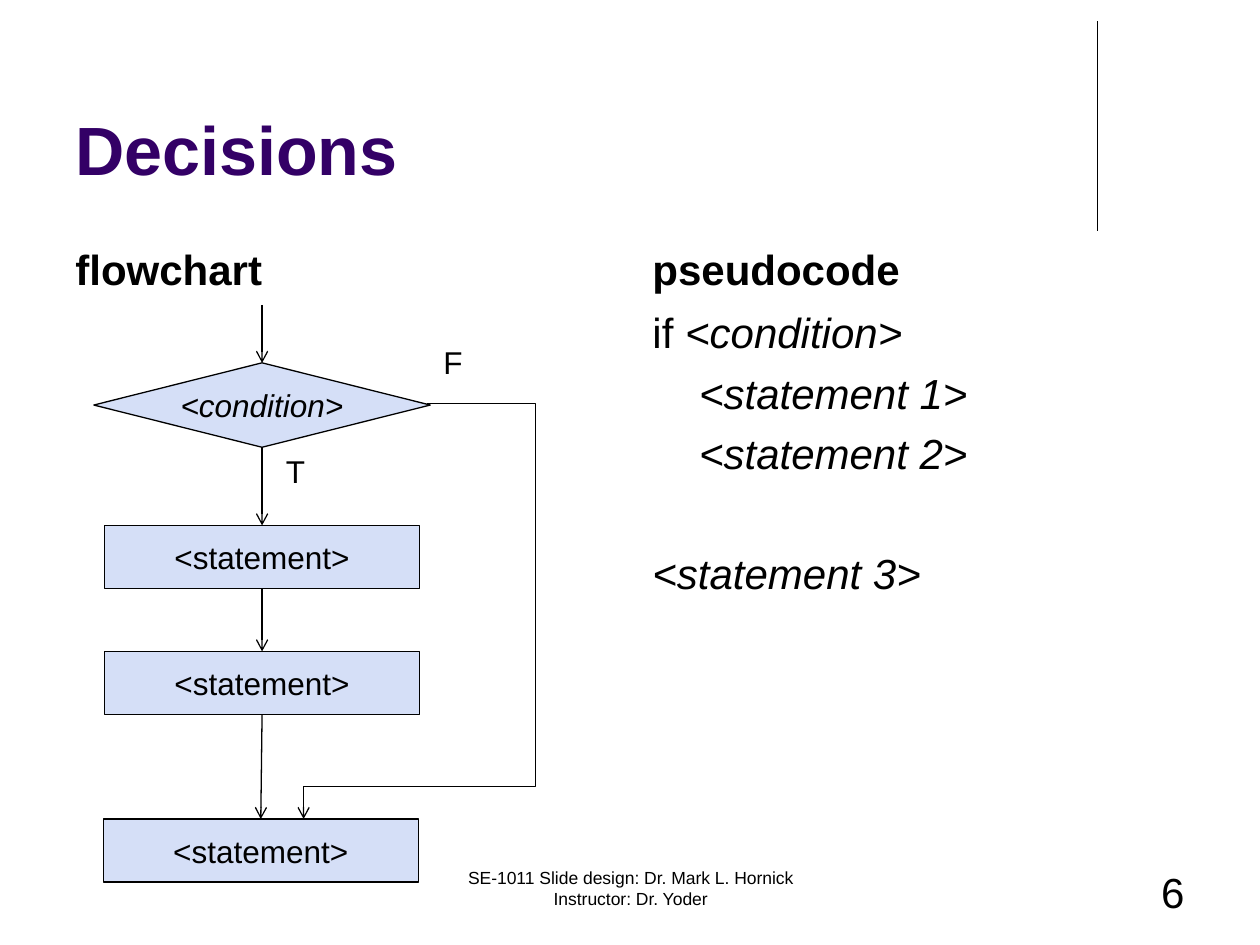
import pptx
import pptx.util
import pptx.dml.color
import pptx.enum.shapes
import pptx.enum.text
import pptx.oxml

Inches, Pt = pptx.util.Inches, pptx.util.Pt
SHAPE = pptx.enum.shapes.MSO_SHAPE
ALIGN = pptx.enum.text.PP_ALIGN
ANCHOR = pptx.enum.text.MSO_ANCHOR

COLORS = {"title": "330066", "ink": "000000", "step": "D5DFF7"}
FONT = "Arial"
NS = 'xmlns:a="http://schemas.openxmlformats.org/drawingml/2006/main"'


def color(name):
    return pptx.dml.color.RGBColor.from_string(COLORS[name])


def write(paragraph, text, size=24, ink="ink", bold=False, italic=False,
          align=ALIGN.LEFT, before=0, indent=0):
    """Add one formatted run to a paragraph."""
    paragraph.alignment = align
    paragraph.space_before = Pt(before)
    if indent:
        properties = paragraph._p.get_or_add_pPr()
        properties.set("marL", str(Inches(indent)))
        properties.set("indent", "0")
    run = paragraph.add_run()
    run.text = text
    run.font.name, run.font.size = FONT, Pt(size)
    run.font.bold, run.font.italic = bold, italic
    run.font.color.rgb = color(ink)


def add_box(slide, left, top, width, height, anchor=ANCHOR.TOP, wrap=True):
    """Add a text box and return its frame."""
    frame = slide.shapes.add_textbox(
        Inches(left), Inches(top), Inches(width), Inches(height)).text_frame
    frame.word_wrap = wrap
    frame.vertical_anchor = anchor
    return frame


def style_line(shape, arrow=False):
    shape.line.color.rgb = color("ink")
    shape.line.width = Pt(0.75)
    if arrow:
        shape.line._get_or_add_ln().append(
            pptx.oxml.parse_xml(f'<a:tailEnd {NS} type="arrow"/>'))


def add_line(slide, x1, y1, x2, y2, arrow=True):
    line = slide.shapes.add_connector(
        pptx.enum.shapes.MSO_CONNECTOR.STRAIGHT,
        Inches(x1), Inches(y1), Inches(x2), Inches(y2))
    style_line(line, arrow)
    line._element.spPr.append(pptx.oxml.parse_xml(f"<a:effectLst {NS}/>"))


def add_step(slide, kind, text, left, top, width, height, italic=False):
    step = slide.shapes.add_shape(
        kind, Inches(left), Inches(top), Inches(width), Inches(height))
    step.shadow.inherit = False
    step.fill.solid()
    step.fill.fore_color.rgb = color("step")
    style_line(step)
    step.text_frame.word_wrap = False
    step.text_frame.vertical_anchor = ANCHOR.MIDDLE
    write(step.text_frame.paragraphs[0], text, size=18, italic=italic,
          align=ALIGN.CENTER)


def add_header(slide, left, top, width, height):
    add_line(slide, left + 8.21, top - 0.13, left + 8.21, top + 1.53, arrow=False)
    title = add_box(slide, left, top, width, height, ANCHOR.BOTTOM)
    write(title.paragraphs[0], "Decisions", size=39, ink="title", bold=True)


def add_heading(slide, text, left, top, width, height):
    heading = add_box(slide, left, top, width, height, ANCHOR.BOTTOM)
    write(heading.paragraphs[0], text, bold=True)


def add_flowchart(slide, left, top):
    center = left + 1.58
    step_width, step_height = 2.5, 0.5
    decision_top, decision_width, decision_height = top + 0.5, 2.67, 0.67
    decision_bottom = decision_top + decision_height
    # Statement boxes, the last one slightly to the left
    statements = [(center, top + 1.79), (center, top + 2.79), (center - 0.01, top + 4.12)]
    for middle, step_top in statements:
        add_step(slide, SHAPE.RECTANGLE, "<statement>", middle - step_width / 2,
                 step_top, step_width, step_height)
    add_step(slide, SHAPE.FLOWCHART_DECISION, "<condition>",
             center - decision_width / 2, decision_top,
             decision_width, decision_height, italic=True)

    # Arrows down the true branch
    bottoms = [decision_bottom] + [y + step_height for _, y in statements[:-1]]
    add_line(slide, center, top + 0.04, center, decision_top)
    for start, (middle, end) in zip(bottoms, statements):
        add_line(slide, center, start, middle, end)

    # False branch around the statements
    turn_x, turn_y, end_x = left + 3.75, top + 3.86, left + 1.91
    route = [(turn_x, top + 0.82), (turn_x, turn_y), (end_x, turn_y),
             (end_x, statements[-1][1])]
    builder = slide.shapes.build_freeform(
        Inches(left + 2.89), Inches(top + 0.82))
    builder.add_line_segments([(Inches(x), Inches(y)) for x, y in route], close=False)
    false_branch = builder.convert_to_shape()
    false_branch.shadow.inherit = False
    false_branch.fill.background()
    style_line(false_branch, arrow=True)

    # Branch labels
    for label, x, y in [("T", 1.67, 1.16), ("F", 2.92, 0.29)]:
        frame = add_box(slide, left + x, top + y, 0.36, 0.4, wrap=False)
        write(frame.paragraphs[0], label, size=18)


def add_pseudocode(slide, left, top, width, height):
    frame = add_box(slide, left, top, width, height)
    condition = frame.paragraphs[0]
    write(condition, "if ")
    write(condition, "<condition>", italic=True)
    # The last statement stands one line apart, outside the branch
    for text, before, indent in [("<statement 1>", 6, 0.37),
                                 ("<statement 2>", 6, 0.37),
                                 ("<statement 3>", 39.6, 0)]:
        write(frame.add_paragraph(), text, italic=True, before=before, indent=indent)


def add_footer(slide, left, top, width, height):
    credit = add_box(slide, left + 2.92, top, 3.17, height)
    write(credit.paragraphs[0],
          "SE-1011 Slide design: Dr. Mark L. Hornick Instructor: Dr. Yoder",
          size=10, align=ALIGN.CENTER)
    number_width = 2.33
    number = add_box(slide, left + width - number_width, top, number_width, height)
    write(number.paragraphs[0], "6", align=ALIGN.RIGHT)


def main():
    deck = pptx.Presentation()
    deck.slide_width, deck.slide_height = Inches(10), Inches(7.5)
    slide = deck.slides.add_slide(deck.slide_layouts[6])
    margin, second_column, column_width = 0.5, 5.08, 4.42
    heading_top, content_top = 1.68, 2.38

    add_header(slide, margin, 0.3, 9, 1.25)
    for text, left in [("flowchart", margin), ("pseudocode", second_column)]:
        add_heading(slide, text, left, heading_top, column_width,
                    content_top - heading_top)
    add_flowchart(slide, margin, content_top)
    add_pseudocode(slide, second_column, content_top, column_width, 4.32)
    add_footer(slide, margin, 6.83, 9, 0.5)
    deck.save("out.pptx")


if __name__ == "__main__":
    main()
